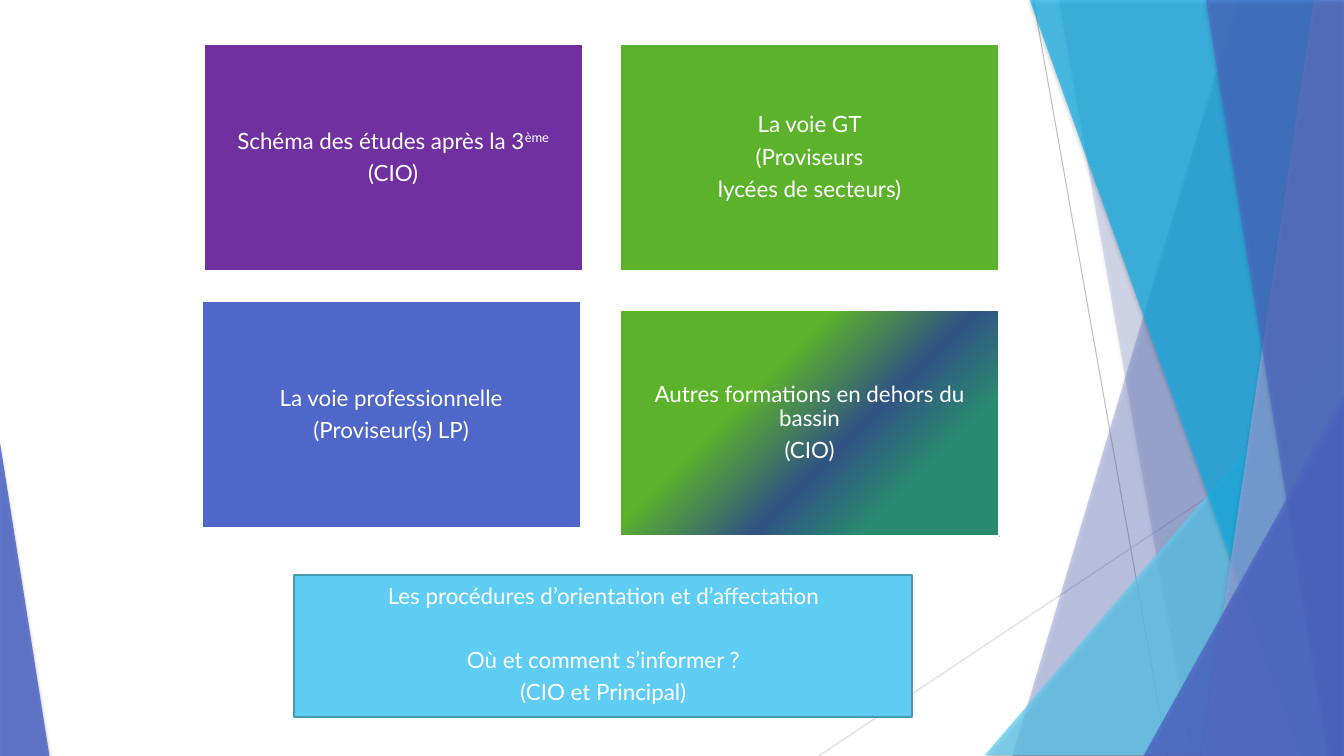
from dataclasses import dataclass

from lxml import etree
from pptx import Presentation
from pptx.dml.color import RGBColor
from pptx.enum.shapes import MSO_CONNECTOR, MSO_SHAPE
from pptx.enum.text import MSO_ANCHOR, PP_ALIGN
from pptx.oxml import parse_xml
from pptx.oxml.ns import qn
from pptx.util import Inches, Pt

RECT = MSO_SHAPE.RECTANGLE
TRIANGLE = MSO_SHAPE.ISOSCELES_TRIANGLE
STRAIGHT = MSO_CONNECTOR.STRAIGHT
MIDDLE = MSO_ANCHOR.MIDDLE
CENTER = PP_ALIGN.CENTER
DRAWING_NS = "http://schemas.openxmlformats.org/drawingml/2006/main"

WIDTH, HEIGHT = 13.33, 7.5
TOP = -0.01


@dataclass(frozen=True)
class Theme:
    font: str = "Lato"
    size: float = 16
    line_spacing: float = 0.9
    space_after: float = 5.6
    wide_space: float = 28.5
    inset: float = 0.07
    border: float = 1.5
    hairline: float = 0.75
    white: str = "FFFFFF"
    black: str = "000000"
    gray: str = "BFBFBF"
    light_gray: str = "D9D9D9"
    purple: str = "7030A0"
    green: str = "5CB32B"
    navy: str = "305383"
    teal: str = "2A8A6F"
    blue: str = "4E67C8"
    pale_blue: str = "95A4DE"
    cyan: str = "12B2EB"
    sky: str = "5ECCF3"
    sky_edge: str = "4697B4"


class SlideBuilder:
    def __init__(self, slide, theme):
        self.slide = slide
        self.theme = theme

    def line(self, start, end, color):
        points = [Inches(v) for v in (*start, *end)]
        cxn = self.slide.shapes.add_connector(STRAIGHT, *points)
        cxn.line.color.rgb = RGBColor.from_string(color)
        cxn.line.width = Pt(self.theme.hairline)
        etree.SubElement(cxn._element.spPr, qn("a:effectLst"))

    def facet(self, sp, color, opacity):
        sp.fill.solid()
        sp.fill.fore_color.rgb = RGBColor.from_string(color)
        sp.line.fill.background()
        sp.shadow.inherit = False
        spPr = sp._element.spPr
        alpha = etree.SubElement(spPr.find(".//" + qn("a:srgbClr")), qn("a:alpha"))
        alpha.set("val", str(opacity * 1000))
        spPr.find(qn("a:effectLst")).append(parse_xml(
            f'<a:outerShdw xmlns:a="{DRAWING_NS}" blurRad="{Pt(3)}" dist="{Pt(2)}" '
            f'dir="5400000" rotWithShape="0"><a:srgbClr val="{self.theme.black}">'
            '<a:alpha val="35000"/></a:srgbClr></a:outerShdw>'))

    def band(self, top_x, bottom_x, color, opacity):
        corners = [(top_x, TOP), (WIDTH, TOP), (WIDTH, HEIGHT), (bottom_x, HEIGHT)]
        start, *rest = [(Inches(x), Inches(y)) for x, y in corners]
        builder = self.slide.shapes.build_freeform(*start)
        builder.add_line_segments(rest, close=True)
        self.facet(builder.convert_to_shape(), color, opacity)

    def triangle(self, box, apex, color, opacity):
        sp = self.slide.shapes.add_shape(TRIANGLE, *map(Inches, box))
        sp.adjustments[0] = apex
        self.facet(sp, color, opacity)

    def card(self, box, lines, fill, border):
        t = self.theme
        sp = self.slide.shapes.add_shape(RECT, *map(Inches, box))
        sp.fill.solid()
        sp.fill.fore_color.rgb = RGBColor.from_string(fill)
        sp.line.color.rgb = RGBColor.from_string(border)
        sp.line.width = Pt(t.border)
        sp.shadow.inherit = False
        tf = sp.text_frame
        tf.word_wrap = True
        tf.vertical_anchor = MIDDLE
        tf.margin_left = tf.margin_right = Inches(t.inset)
        tf.margin_top = tf.margin_bottom = Inches(t.inset)
        tf.text = "\n".join(lines)
        for p in tf.paragraphs:
            p.alignment = CENTER
            p.line_spacing = t.line_spacing
            p.space_after = Pt(t.space_after)
            for r in p.runs:
                self.style_run(r)
        return sp

    def style_run(self, r):
        r.font.name = self.theme.font
        r.font.size = Pt(self.theme.size)
        r.font.color.rgb = RGBColor.from_string(self.theme.white)

    def superscript(self, p, text):
        r = p.add_run()
        r.text = text
        self.style_run(r)
        r._r.get_or_add_rPr().set("baseline", "30000")

    def gradient(self, sp, stops):
        marks = "".join(f'<a:gs pos="{pos * 1000}"><a:srgbClr val="{color}"/></a:gs>'
                        for pos, color in stops)
        spPr = sp._element.spPr
        spPr.replace(spPr.find(qn("a:solidFill")), parse_xml(
            f'<a:gradFill xmlns:a="{DRAWING_NS}" rotWithShape="1"><a:gsLst>{marks}'
            '</a:gsLst><a:lin ang="2700000" scaled="0"/></a:gradFill>'))


def main():
    prs = Presentation()
    prs.slide_width, prs.slide_height = Inches(WIDTH), Inches(HEIGHT)
    t = Theme()
    s = SlideBuilder(prs.slides.add_slide(prs.slide_layouts[6]), t)

    s.line((10.25, 0), (11.58, HEIGHT), t.gray)
    s.line((WIDTH, 4.03), (8.12, HEIGHT), t.light_gray)
    s.band(12.28, 10.04, t.blue, 30)
    s.band(10.5, 11.82, t.blue, 20)
    s.triangle((9.77, 3.33, 3.56, 4.16), 1, t.sky, 72)
    s.band(10.21, 12.91, t.cyan, 70)
    s.band(13.03, 11.92, t.pale_blue, 70)
    s.band(11.96, 13.17, t.blue, 65)
    s.triangle((11.34, 3.93, 1.99, 3.57), 1, t.blue, 80)
    s.triangle((0, 4.39, 0.49, 3.11), 0, t.blue, 85)

    card_size = (3.76, 2.25)
    topics = [
        ((2.02, 0.44), t.purple, ["Schéma des études après la 3", "(CIO)"]),
        ((6.15, 0.44), t.green, ["La voie GT", "(Proviseurs", "lycées de secteurs)"]),
        ((2, 2.99), t.blue, ["La voie professionnelle", "(Proviseur(s) LP)"]),
        ((6.15, 3.07), t.green, ["Autres formations en dehors du bassin", "(CIO)"]),
    ]
    cards = [s.card(corner + card_size, lines, fill, t.white)
             for corner, fill, lines in topics]
    s.superscript(cards[0].text_frame.paragraphs[0], "ème")
    s.gradient(cards[-1], [(35, t.green), (59, t.navy), (77, t.teal)])

    procedures = s.card((2.92, 5.7, 6.13, 1.41), [
        "Les procédures d’orientation et d’affectation",
        "Où et comment s’informer ?",
        "(CIO et Principal)",
    ], t.sky, t.sky_edge)
    procedures.text_frame.paragraphs[0].space_after = Pt(t.wide_space)

    prs.save("out.pptx")


if __name__ == "__main__":
    main()
